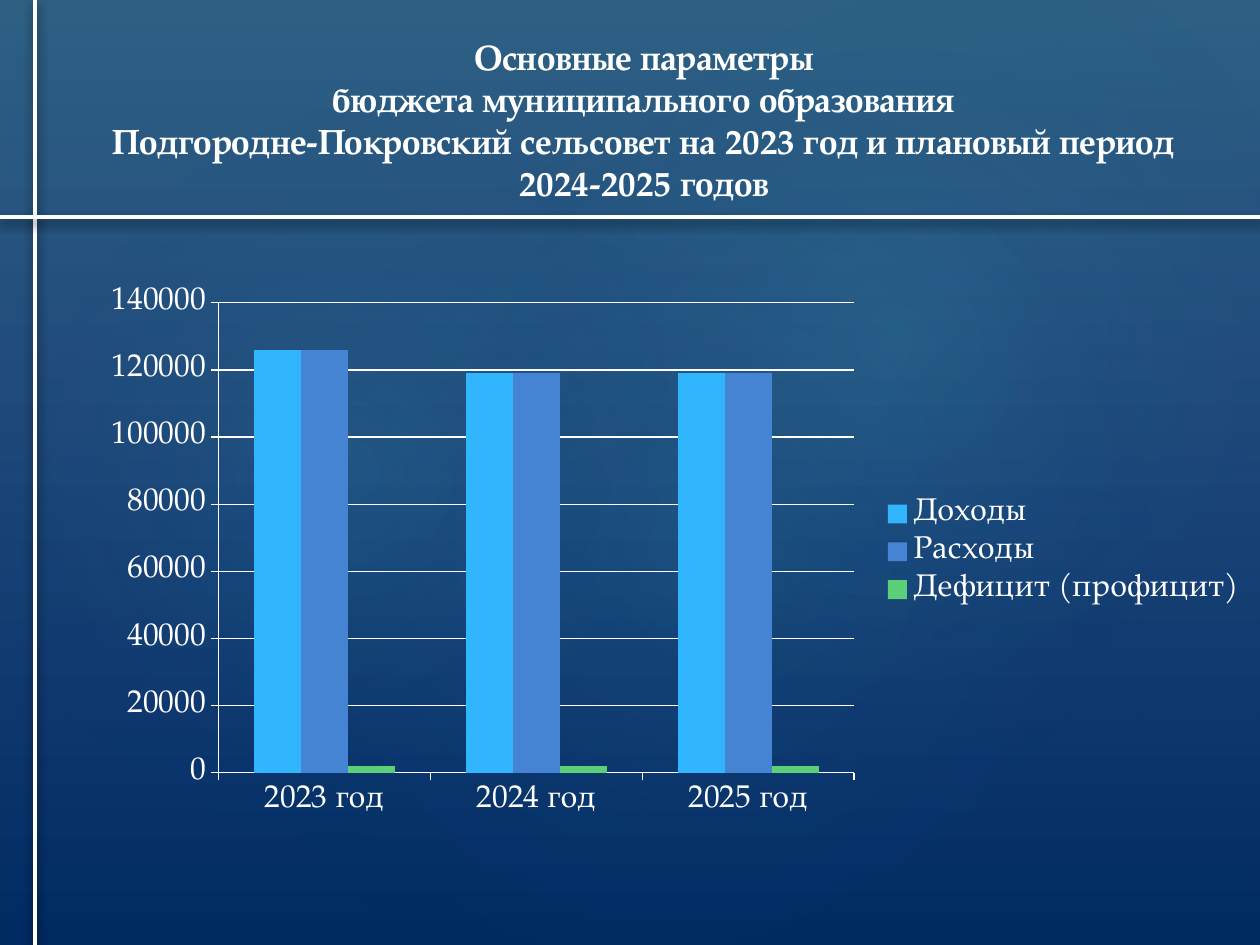
"""Build a slide with a clustered column chart of the municipal budget for 2023-2025."""
from lxml import etree
from pptx import Presentation
from pptx.chart.data import CategoryChartData
from pptx.dml.color import RGBColor
from pptx.enum.chart import XL_CHART_TYPE as ChartType, XL_LEGEND_POSITION as LegendPosition
from pptx.enum.chart import XL_TICK_MARK as TickMark
from pptx.enum.shapes import MSO_CONNECTOR as Connector, MSO_SHAPE as Shape
from pptx.enum.text import MSO_AUTO_SIZE as AutoSize, PP_ALIGN as Align
from pptx.oxml import parse_xml
from pptx.oxml.ns import nsdecls, qn
from pptx.util import Inches, Pt

FONT = "TeX Gyre Pagella"
WHITE = RGBColor(0xFF, 0xFF, 0xFF)
BLACK = RGBColor(0x00, 0x00, 0x00)
SKY = RGBColor(0x45, 0x58, 0x90)
NAVY = RGBColor(0x00, 0x29, 0x5F)
TEAL = RGBColor(0x03, 0x70, 0x6E)
BLUE = RGBColor(0x07, 0x3E, 0x87)
AQUA = RGBColor(0x5A, 0xFB, 0xF8)
INCOME = RGBColor(0x31, 0xB6, 0xFD)
EXPENSE = RGBColor(0x45, 0x84, 0xD3)
BALANCE = RGBColor(0x5B, 0xD0, 0x78)

LINEAR = '<a:lin ang="5400000" scaled="0"/>'
RADIAL = '<a:path path="circle"><a:fillToRect l="50000" t="50000" r="50000" b="50000"/></a:path>'

presentation = Presentation()
presentation.slide_width = Inches(10)
presentation.slide_height = Inches(7.5)
column = presentation.slide_width / 100
row = presentation.slide_height / 100
slide = presentation.slides.add_slide(presentation.slide_layouts[6])


def box(left, top, width, height):
    """Turn shares of the slide, in percent, into lengths."""
    return [round(share * unit) for share, unit in
            zip((left, top, width, height), (column, row, column, row))]


def set_gradient(fill, element, stops, direction):
    """Fill with (position, colour, opacity) stops, all in percent."""
    fill.solid()
    solid = next(element.iter(qn("a:solidFill")))
    stop_xml = "".join(
        f'<a:gs pos="{position * 1000}"><a:srgbClr val="{color}">'
        f'<a:alpha val="{opacity * 1000}"/></a:srgbClr></a:gs>'
        for position, color, opacity in stops)
    solid.getparent().replace(solid, parse_xml(
        f'<a:gradFill {nsdecls("a")} rotWithShape="1"><a:gsLst>{stop_xml}</a:gsLst>{direction}</a:gradFill>'))


set_gradient(slide.background.fill, slide.element, [(0, SKY, 100), (100, NAVY, 100)], LINEAR)

backdrop = [
    (Shape.RECTANGLE, box(0, 0, 100, 100), 0, [(0, TEAL, 36), (100, BLUE, 10)], LINEAR),
    (Shape.OVAL, box(15, 15.2, 79.2, 83.2), 328.7, [(0, AQUA, 7), (58, BLUE, 0)], RADIAL),
    (Shape.OVAL, box(-3, 17.07, 60.6, 65.33), 294.3, [(0, AQUA, 8), (58, BLUE, 0)], RADIAL),
    (Shape.OVAL, box(35.8, 1.73, 70.9, 69.33), 328.7, [(0, AQUA, 8), (58, BLUE, 0)], RADIAL),
]
for kind, place, rotation, stops, direction in backdrop:
    shape = slide.shapes.add_shape(kind, *place)
    shape.rotation = rotation
    shape.shadow.inherit = False
    shape.line.fill.background()
    set_gradient(shape.fill, shape.element, stops, direction)

for ends in (box(2.8, 0, 2.8, 100), box(0, 22.93, 100, 22.93)):
    rule = slide.shapes.add_connector(Connector.STRAIGHT, *ends)
    rule.line.color.rgb = WHITE
    rule.line.width = Pt(2.25)
    effects = etree.SubElement(rule.element.spPr, qn("a:effectLst"))
    shadow = etree.SubElement(effects, qn("a:outerShdw"), blurRad=str(Pt(6)), dist=str(Pt(3)),
                              dir="5400000", algn="ctr", rotWithShape="0")
    shadow_color = etree.SubElement(shadow, qn("a:srgbClr"), val=str(BLACK))
    etree.SubElement(shadow_color, qn("a:alpha"), val="60000")

budget = [
    ("Доходы", (126000, 119000, 119000), INCOME),
    ("Расходы", (126000, 119000, 119000), EXPENSE),
    ("Дефицит (профицит)", (2000, 2000, 2000), BALANCE),
]
chart_data = CategoryChartData()
chart_data.categories = [f"{year} год" for year in (2023, 2024, 2025)]
for name, values, _ in budget:
    chart_data.add_series(name, values)
chart = slide.shapes.add_chart(
    ChartType.COLUMN_CLUSTERED, *box(7, 29.2, 93, 58.4), chart_data).chart
chart.font.name = FONT
chart.font.size = Pt(18)
chart.font.color.rgb = WHITE
chart.has_title = False
chart.has_legend = True
chart.legend.position = LegendPosition.RIGHT
chart.legend.include_in_layout = False

plot = chart.plots[0]
plot.gap_width = 150
plot.overlap = 0
plot.vary_by_categories = False
for series, (_, _, color) in zip(plot.series, budget):
    series.format.fill.solid()
    series.format.fill.fore_color.rgb = color

value_axis = chart.value_axis
value_axis.minimum_scale, value_axis.maximum_scale = 0, 140000
value_axis.major_unit = 20000
value_axis.has_major_gridlines = True
for axis in (chart.category_axis, value_axis):
    axis.major_tick_mark = TickMark.OUTSIDE
for line in (chart.category_axis.format.line, value_axis.format.line,
             value_axis.major_gridlines.format.line):
    line.color.rgb = WHITE
    line.width = Pt(0.75)

title = slide.shapes.add_textbox(*box(6.2, 3.07, 89.8, 19.33))
frame = title.text_frame
frame.word_wrap = True
frame.auto_size = AutoSize.SHAPE_TO_FIT_TEXT
frame.text = "\n".join([
    "Основные параметры",
    "бюджета муниципального образования",
    "Подгородне-Покровский сельсовет на 2023 год и плановый период 2024-2025 годов",
])
for paragraph in frame.paragraphs:
    paragraph.alignment = Align.CENTER
    font = paragraph.runs[0].font
    font.name, font.size, font.bold = FONT, Pt(20), True
    font.color.rgb = WHITE

presentation.save("out.pptx")
